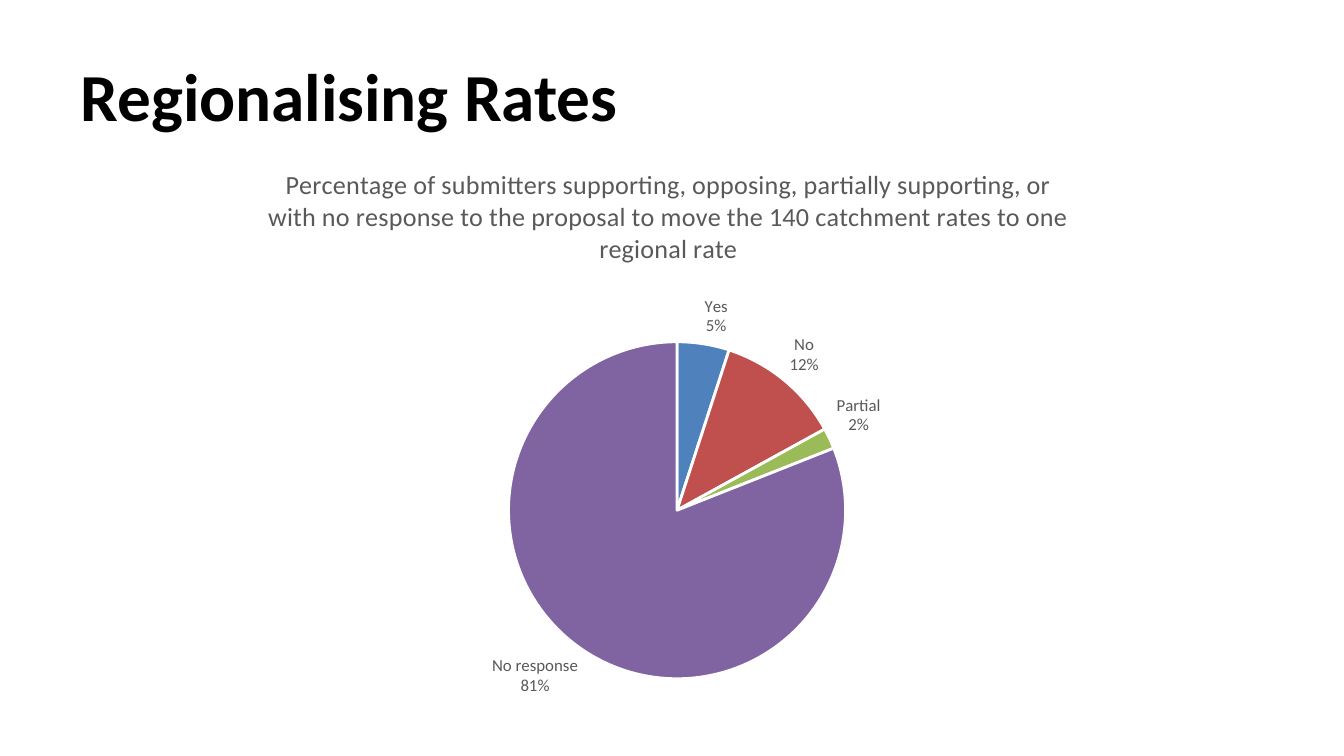
from lxml import etree
from pptx import Presentation
from pptx.chart.data import CategoryChartData
from pptx.dml.color import RGBColor
from pptx.enum.chart import XL_CHART_TYPE, XL_LABEL_POSITION
from pptx.enum.text import MSO_ANCHOR, PP_ALIGN
from pptx.oxml import parse_xml
from pptx.oxml.ns import nsdecls, qn
from pptx.util import Inches, Pt

# Widescreen, 16 to 9
WIDTH = Inches(10)
HEIGHT = WIDTH * 9 // 16
FONT = "Calibri"
COLOURS = {
    "title": "000000", "text": "595959", "gap": "FFFFFF",
    "Yes": "4F81BD", "No": "C0504D", "Partial": "9BBB59", "No response": "8064A2",
}
RESPONSES = {"Yes": 5, "No": 12, "Partial": 2, "No response": 81}
QUESTION = ("Percentage of submitters supporting, opposing, partially supporting, "
            "or with no response to the proposal to move the 140 catchment rates "
            "to one regional rate")

# Boxes as shares of the slide: left, top, width, height
TITLE_BOX = (0.05, 0.04, 0.74, 0.17)
CHART_BOX = (0.12, 0.19, 0.76, 0.77)


def place(box):
    left, top, width, height = box
    return (int(left * WIDTH), int(top * HEIGHT),
            int(width * WIDTH), int(height * HEIGHT))


def style(font, size, colour, bold=False):
    font.name, font.size, font.bold = FONT, Pt(size), bold
    font.color.rgb = RGBColor.from_string(COLOURS[colour])


def manual_layout(**shares):
    """Chart layout whose values are shares of the chart area."""
    target = '<c:layoutTarget val="inner"/>' if "w" in shares else ""
    modes = "".join(f'<c:{key}Mode val="edge"/>' for key in "xy")
    values = "".join(f'<c:{key} val="{share}"/>' for key, share in shares.items())
    return parse_xml(f'<c:layout {nsdecls("c")}><c:manualLayout>{target}{modes}'
                     f'{values}</c:manualLayout></c:layout>')


def set_layout(parent, layout, index):
    for old in parent.findall(qn("c:layout")):
        parent.remove(old)
    parent.insert(index, layout)


def add_title(page, box):
    title = page.shapes.title
    title.left, title.top, title.width, title.height = place(box)
    frame = title.text_frame
    frame.word_wrap = True
    frame.vertical_anchor = MSO_ANCHOR.MIDDLE
    para = frame.paragraphs[0]
    para.alignment = PP_ALIGN.LEFT
    span = para.add_run()
    span.text = "Regionalising Rates"
    style(span.font, 36, "title", bold=True)


def add_response_pie(page, box):
    data = CategoryChartData(number_format="0")
    data.categories = list(RESPONSES)
    data.add_series("Series 1", list(RESPONSES.values()))
    chart = page.shapes.add_chart(XL_CHART_TYPE.PIE, *place(box), data).chart
    chart.has_legend = False
    style(chart.font, 10, "title")

    # Heading above the pie
    chart.has_title = True
    span = chart.chart_title.text_frame.paragraphs[0].add_run()
    span.text = QUESTION
    style(span.font, 14, "text")
    heading = chart.chart_title._element
    set_layout(heading, manual_layout(x=0.1, y=0.03), 1)

    # Slices
    plot = chart.plots[0]
    plot.vary_by_categories = True
    series = plot.series[0]
    for index, name in enumerate(RESPONSES):
        look = series.points[index].format
        look.fill.solid()
        look.fill.fore_color.rgb = RGBColor.from_string(COLOURS[name])
        look.line.color.rgb = RGBColor.from_string(COLOURS["gap"])
        look.line.width = Pt(1.5)
    area = chart._chartSpace.chart.plotArea
    set_layout(area, manual_layout(x=0.34, y=0.34, w=0.33, h=0.58), 0)

    # Category and percentage on two lines
    labels = series.data_labels
    labels.show_category_name = labels.show_percentage = True
    labels.show_value = False
    labels.number_format, labels.number_format_is_linked = "0%", False
    labels.position = XL_LABEL_POSITION.OUTSIDE_END
    style(labels.font, 9, "text")
    separator = etree.Element(qn("c:separator"))
    separator.text = "\n"
    labels._element.find(qn("c:showBubbleSize")).addnext(separator)


def main():
    deck = Presentation()
    deck.slide_width, deck.slide_height = WIDTH, HEIGHT
    page = deck.slides.add_slide(deck.slide_layouts.get_by_name("Title Only"))
    add_title(page, TITLE_BOX)
    add_response_pie(page, CHART_BOX)
    deck.save("out.pptx")


if __name__ == "__main__":
    main()
